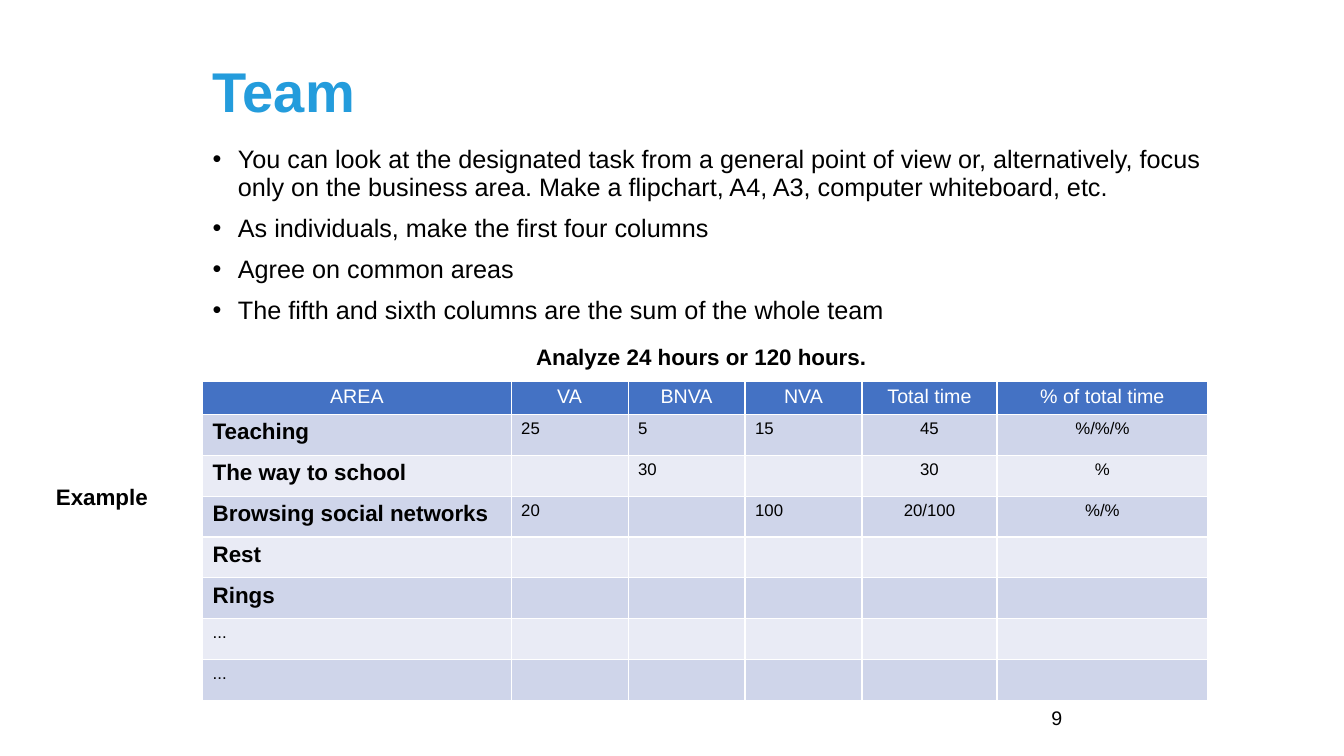
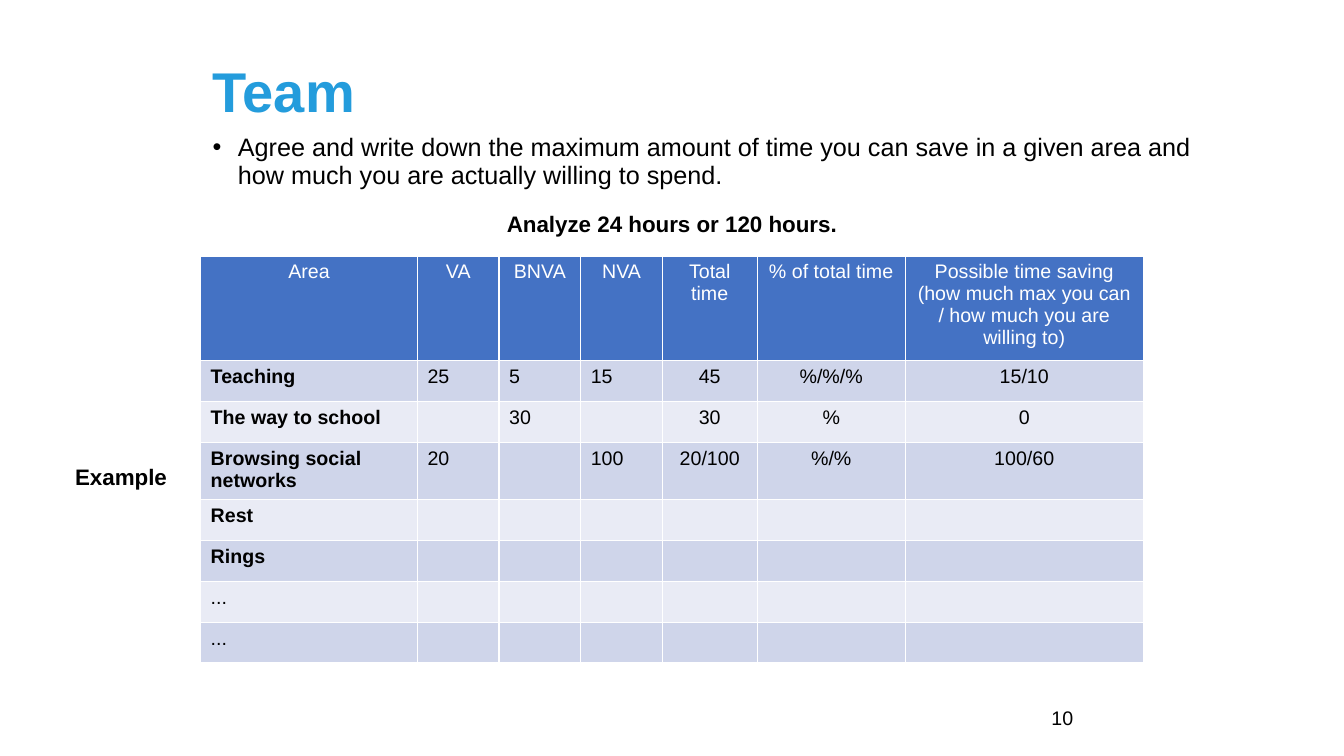
from pptx import Presentation
from pptx.dml.color import RGBColor
from pptx.enum.text import MSO_ANCHOR, MSO_AUTO_SIZE, PP_ALIGN
from pptx.util import Inches, Pt

TITLE_BLUE = RGBColor(0x24, 0x9C, 0xDC)
HEADER_BLUE = RGBColor(0x44, 0x72, 0xC4)
BANDS = RGBColor(0xCF, 0xD5, 0xEA), RGBColor(0xE9, 0xEB, 0xF5)
BLACK = RGBColor(0, 0, 0)
WHITE = RGBColor(0xFF, 0xFF, 0xFF)
FONT = "Arial"
FIRST_NUMBER = 9
ROW_HEIGHT = 0.405
FIRST_CENTERED = 4
CAPTION = "Analyze 24 hours or 120 hours."

HEADER = ["VA", "BNVA", "NVA", "Total time", "% of total time"]
ROWS = [
    ["Teaching", "25", "5", "15", "45", "%/%/%"],
    ["The way to school", "", "30", "", "30", "%"],
    ["Browsing social networks", "20", "", "100", "20/100", "%/%"],
    ["Rest"],
    ["Rings"],
    ["..."],
    ["..."],
]
SAVING_HEADER = "Possible time saving\n(how much max you can / how much you are willing to)"
SAVINGS = ["15/10", "0", "100/60"]

SLIDES = [
    {
        "bullets": [
            "You can look at the designated task from a general point of view or, "
            "alternatively, focus only on the business area. Make a flipchart, A4, A3, "
            "computer whiteboard, etc.",
            "As individuals, make the first four columns",
            "Agree on common areas",
            "The fifth and sixth columns are the sum of the whole team",
        ],
        "body": (2.01, 1.41, 10.42, 2.31),
        "caption": (4.95, 3.36, 4.01, 0.37),
        "example": (0.2, 4.74, 1.62, 0.37),
        "origin": (2.01, 3.78),
        "columns": [3.06, 1.16, 1.16, 1.16, 1.34, 2.09],
        "heights": {0: 0.33},
        "sizes": (16, 12),
        "table": [["AREA"] + HEADER] + ROWS,
    },
    {
        "bullets": [
            "Agree and write down the maximum amount of time you can save in a given "
            "area and how much you are actually willing to spend.",
        ],
        "body": (2.01, 1.29, 10.42, 1.13),
        "caption": (4.66, 2.04, 4.01, 0.37),
        "example": (0.39, 4.55, 1.62, 0.37),
        "origin": (1.99, 2.54),
        "columns": [2.15, 0.81, 0.81, 0.81, 0.94, 1.47, 2.36],
        "heights": {0: 1.04, 3: 0.57},
        "sizes": (14, 14),
        "table": [["Area"] + HEADER + [SAVING_HEADER]]
        + [row + [saving] for row, saving in zip(ROWS, SAVINGS)]
        + ROWS[len(SAVINGS):],
    },
]


def style(p, size, color=BLACK, bold=False, align=PP_ALIGN.LEFT):
    p.alignment = align
    p.font.name = FONT
    p.font.size = Pt(size)
    p.font.bold = bold
    p.font.color.rgb = color


def place(sp, box):
    sp.left, sp.top, sp.width, sp.height = map(Inches, box)


def add_title(slide, text):
    title = slide.shapes.title
    place(title, (2.01, 0.15, 9.88, 1.58))
    tf = title.text_frame
    tf.text = text
    tf.auto_size = MSO_AUTO_SIZE.NONE
    tf.vertical_anchor = MSO_ANCHOR.MIDDLE
    p = tf.paragraphs[0]
    style(p, 40, TITLE_BLUE, bold=True)
    p.line_spacing = 0.9


def add_bullets(slide, items, box):
    body = slide.placeholders[1]
    place(body, box)
    tf = body.text_frame
    tf.text = "\n".join(items)
    tf.auto_size = MSO_AUTO_SIZE.NONE
    for i, p in enumerate(tf.paragraphs):
        pPr = p._p.get_or_add_pPr()
        pPr.set("marL", str(Inches(0.25)))
        pPr.set("indent", str(-Inches(0.25)))
        style(p, 18)
        p.line_spacing = 0.9
        p.space_before = Pt(10 if i else 0)


def add_label(slide, text, box, **look):
    tf = slide.shapes.add_textbox(*map(Inches, box)).text_frame
    tf.word_wrap = True
    tf.text = text
    style(tf.paragraphs[0], **look)


def add_table(slide, data):
    columns, rows = data["columns"], data["table"]
    heights = [data["heights"].get(i, ROW_HEIGHT) for i in range(len(rows))]
    box = (*data["origin"], sum(columns), sum(heights))
    table = slide.shapes.add_table(len(rows), len(columns), *map(Inches, box)).table
    for column, width in zip(table.columns, columns):
        column.width = Inches(width)
    area_size, value_size = data["sizes"]
    for r, (values, height) in enumerate(zip(rows, heights)):
        table.rows[r].height = Inches(height)
        for c in range(len(columns)):
            cell = table.cell(r, c)
            cell.text = values[c] if c < len(values) else ""
            cell.fill.solid()
            cell.fill.fore_color.rgb = BANDS[(r - 1) % 2] if r else HEADER_BLUE
            is_area = c == 0 and values[0] != "..."
            centered = r == 0 or c >= FIRST_CENTERED
            for p in cell.text_frame.paragraphs:
                style(
                    p,
                    (area_size if is_area else value_size) if r else 14,
                    BLACK if r else WHITE,
                    bold=r > 0 and is_area,
                    align=PP_ALIGN.CENTER if centered else PP_ALIGN.LEFT,
                )


def main():
    prs = Presentation()
    prs.slide_width, prs.slide_height = Inches(13.33), Inches(7.5)
    label = {"size": 16, "bold": True, "align": PP_ALIGN.CENTER}
    for number, data in enumerate(SLIDES, FIRST_NUMBER):
        slide = prs.slides.add_slide(prs.slide_layouts[1])
        add_title(slide, "Team")
        add_bullets(slide, data["bullets"], data["body"])
        add_label(slide, str(number), (10.33, 6.95, 3, 0.4), size=14)
        add_label(slide, CAPTION, data["caption"], **label)
        add_label(slide, "Example", data["example"], **label)
        add_table(slide, data)
    prs.save("out.pptx")


if __name__ == "__main__":
    main()
